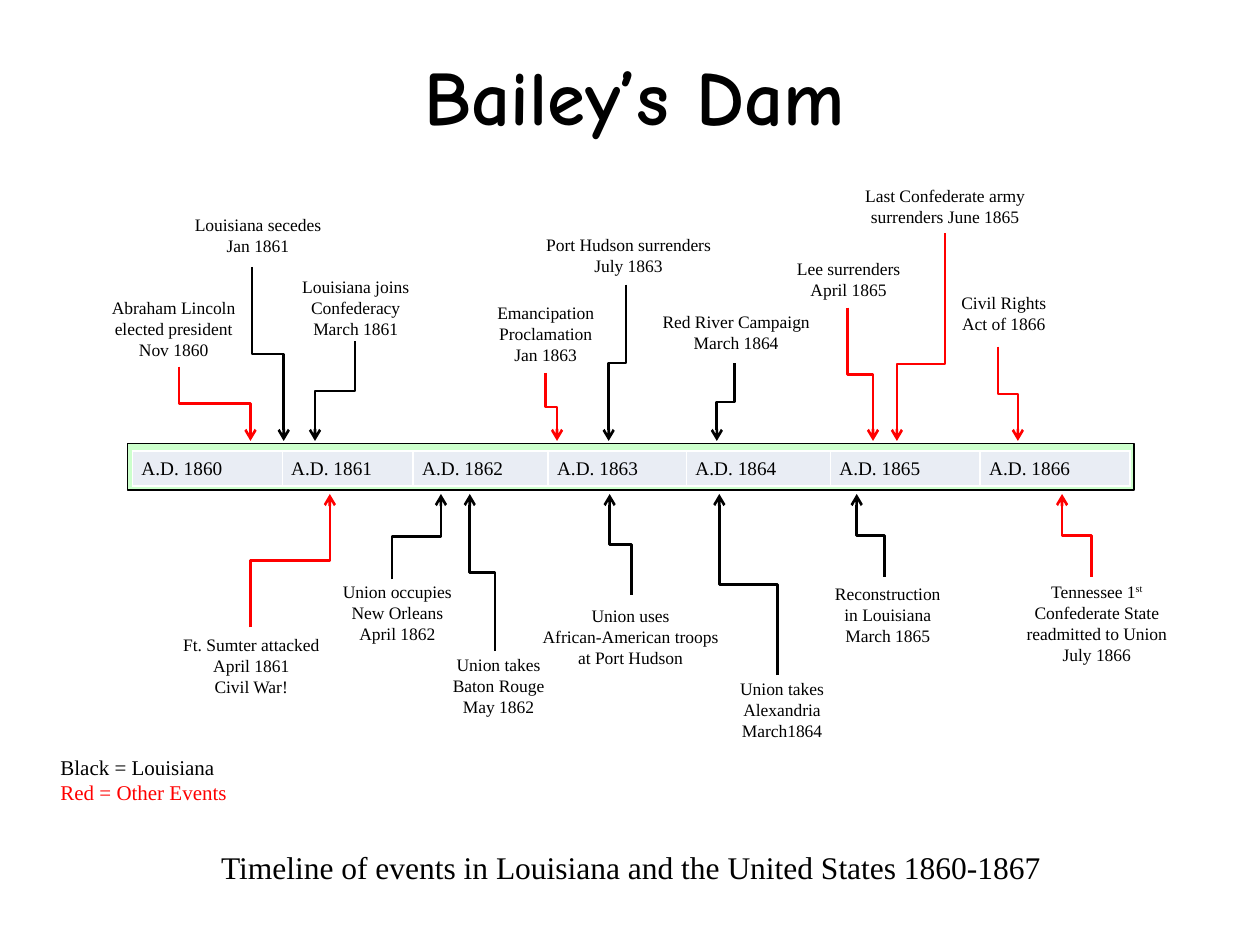
"""Build the Bailey's Dam timeline slide."""
from pptx import Presentation
from pptx.dml.color import RGBColor
from pptx.enum.shapes import MSO_CONNECTOR, MSO_SHAPE
from pptx.enum.text import MSO_ANCHOR, PP_ALIGN
from pptx.oxml import parse_xml
from pptx.oxml.ns import nsdecls, qn
from pptx.util import Cm, Pt

BLACK = RGBColor(0, 0, 0)
RED = RGBColor(0xFF, 0, 0)
GREEN = RGBColor(0xCC, 0xFF, 0xCC)
GREY = RGBColor(0xE9, 0xED, 0xF4)
SERIF = "Times New Roman"

TITLE = "Bailey’s Dam"
FOOT = "Timeline of events in Louisiana and the United States 1860-1867"
KEY = [("Black = Louisiana", BLACK), ("Red = Other Events", RED)]
YEARS = range(1860, 1867)
WIDTHS = [3.02, 2.64, 2.72, 2.79, 2.9, 3.02, 3.02]
ABOVE, BELOW = 8.89, 9.96

# text, colour, label (left, top, width, lines), arrow (x, y, tip x, bend)
EVENTS = [
    ("Abraham Lincoln elected president Nov 1860", RED,
     (1.91, 5.87, 3.18, 3), (3.61, 7.39, 5.05, 0.5)),
    ("Louisiana secedes\nJan 1861", BLACK,
     (3.61, 4.19, 3.18, 2), (5.08, 5.38, 5.72, 0.5)),
    ("Louisiana joins Confederacy\nMarch 1861", BLACK,
     (5.72, 5.44, 2.9, 3), (7.16, 6.88, 6.35, 0.5)),
    ("Emancipation\nProclamation\nJan 1863", RED,
     (9.63, 5.97, 2.74, 3), (11, 7.52, 11.23, 0.5)),
    ("Port Hudson surrenders\nJuly 1863", BLACK,
     (10.74, 4.6, 3.86, 2), (12.62, 5.74, 12.27, 0.5)),
    ("Red River Campaign\nMarch 1864", BLACK,
     (12.95, 6.15, 3.78, 2), (14.81, 7.32, 14.45, 0.5)),
    ("Lee surrenders April 1865", RED,
     (15.67, 5.08, 2.87, 2), (17.09, 6.2, 17.6, 0.5)),
    ("Last Confederate army surrenders June 1865", RED,
     (16.94, 3.61, 4.22, 2), (19.05, 4.7, 18.08, 0.63)),
    ("Civil Rights Act of 1866", RED,
     (18.85, 5.77, 2.77, 2), (20.12, 6.99, 20.52, 0.5)),
    ("Ft. Sumter attacked\nApril 1861\nCivil War!", RED,
     (3.35, 12.65, 3.43, 3), (5.05, 12.65, 6.65, 0.5)),
    ("Union occupies\nNew Orleans\nApril 1862", BLACK,
     (6.55, 11.58, 2.92, 3), (7.9, 11.68, 8.89, 0.5)),
    ("Union takes\nBaton Rouge\nMay 1862", BLACK,
     (8.46, 13.06, 3.18, 3), (9.98, 13.13, 9.47, 0.5)),
    ("Union uses\nAfrican-American troops\nat Port Hudson", BLACK,
     (10.59, 12.07, 4.24, 3), (12.73, 11.99, 12.29, 0.5)),
    ("Union takes Alexandria March1864", BLACK,
     (14.38, 13.54, 2.77, 3), (15.67, 13.61, 14.5, 0.5)),
    ("Reconstruction in Louisiana\nMarch 1865", BLACK,
     (16.51, 11.63, 2.77, 3), (17.83, 11.63, 17.27, 0.5)),
    ("Tennessee 1^st^ Confederate State readmitted to Union\nJuly 1866", RED,
     (20.09, 11.58, 4.04, 4), (22, 11.63, 21.41, 0.5)),
]


def write(frame, text, size=10, font=SERIF, bold=False, inks=(BLACK,),
          align=PP_ALIGN.CENTER, wrap=True, anchor=MSO_ANCHOR.TOP):
    """Fill a text frame, one paragraph a line, with ^marks^ raised."""
    frame.word_wrap = wrap
    frame.vertical_anchor = anchor
    for num, line in enumerate(text.split("\n")):
        para = frame.add_paragraph() if num else frame.paragraphs[0]
        para.alignment = align
        for part, piece in enumerate(line.split("^")):
            run = para.add_run()
            run.text = piece
            run.font.size, run.font.name, run.font.bold = Pt(size), font, bold
            run.font.color.rgb = inks[num % len(inks)]
            if part % 2:
                run.font._element.set("baseline", "30000")


def label(slide, box, text, **form):
    """Add a text box given in centimetres."""
    shape = slide.shapes.add_textbox(*map(Cm, box))
    write(shape.text_frame, text, **form)


def arrow(slide, start, end, bend, ink):
    """Add an elbow arrow that leaves and arrives vertically."""
    (x1, y1), (x2, y2) = start, end
    right, up = x2 > x1, y2 < y1
    midx, midy = (x1 + x2) / 2, (y1 + y2) / 2
    run = abs(y2 - y1) / 2 * (-1 if right else 1)
    rise = abs(x2 - x1) / 2 * (-1 if up else 1)
    ends = midx - run, midy - rise, midx + run, midy + rise
    line = slide.shapes.add_connector(MSO_CONNECTOR.ELBOW, *map(Cm, ends))
    line.line.color.rgb, line.line.width = ink, Pt(1.5)
    props = line._element.spPr
    props.find(qn("a:xfrm")).set("rot", str((90 if right == up else 270) * 60000))
    shape = props.find(qn("a:prstGeom"))
    shape.find(qn("a:avLst")).append(parse_xml(
        f'<a:gd {nsdecls("a")} name="adj1" fmla="val {round(bend * 100000)}"/>'))
    props.find(qn("a:ln")).append(
        parse_xml(f'<a:tailEnd {nsdecls("a")} type="arrow"/>'))
    props.append(parse_xml(f'<a:effectLst {nsdecls("a")}/>'))


def band(slide):
    """Add the framed row of years."""
    rect = slide.shapes.add_shape(
        MSO_SHAPE.RECTANGLE, Cm(2.57), Cm(8.94), Cm(20.29), Cm(0.94))
    rect.shadow.inherit = False
    rect.fill.solid()
    rect.fill.fore_color.rgb = GREEN
    rect.line.color.rgb, rect.line.width = BLACK, Pt(0.75)
    table = slide.shapes.add_table(1, len(YEARS), Cm(2.67), Cm(9.09),
                                   Cm(sum(WIDTHS)), Cm(0.71)).table
    table.first_row = table.horz_banding = False
    table.rows[0].height = Cm(0.71)
    for col, (year, width) in enumerate(zip(YEARS, WIDTHS)):
        table.columns[col].width = Cm(width)
        cell = table.cell(0, col)
        write(cell.text_frame, f"A.D. {year}", size=11, align=PP_ALIGN.LEFT)
        cell.vertical_anchor = MSO_ANCHOR.MIDDLE
        cell.margin_left = cell.margin_right = Cm(0.18)
        cell.margin_top = cell.margin_bottom = 0
        cell.fill.solid()
        cell.fill.fore_color.rgb = GREY
        for spot, side in enumerate("LRTB"):
            cell._tc.tcPr.insert(spot, parse_xml(
                f'<a:ln{side} {nsdecls("a")} w="12700"><a:solidFill>'
                f'<a:srgbClr val="FFFFFF"/></a:solidFill></a:ln{side}>'))


def main():
    """Lay out the slide and save it."""
    deck = Presentation()
    deck.slide_width, deck.slide_height = Cm(25.4), Cm(19.05)
    slide = deck.slides.add_slide(deck.slide_layouts[6])
    label(slide, (0.84, 0.43, 23.93, 2.97), TITLE, size=44,
          font="Comic Neue", bold=True, anchor=MSO_ANCHOR.MIDDLE)
    label(slide, (2.54, 16.97, 20.37, 1.02), FOOT, size=18)
    band(slide)
    for text, ink, (left, top, width, lines), (x, y, tip, bend) in EVENTS:
        label(slide, (left, top, width, 0.27 + 0.43 * lines), text)
        goal = ABOVE if y < ABOVE else BELOW
        arrow(slide, (x, y), (tip, goal), bend, ink)
    label(slide, (0.97, 15.09, 3.91, 1.27), "\n".join(t for t, _ in KEY),
          size=12, inks=[ink for _, ink in KEY], align=PP_ALIGN.LEFT, wrap=False)
    deck.save("out.pptx")


if __name__ == "__main__":
    main()
